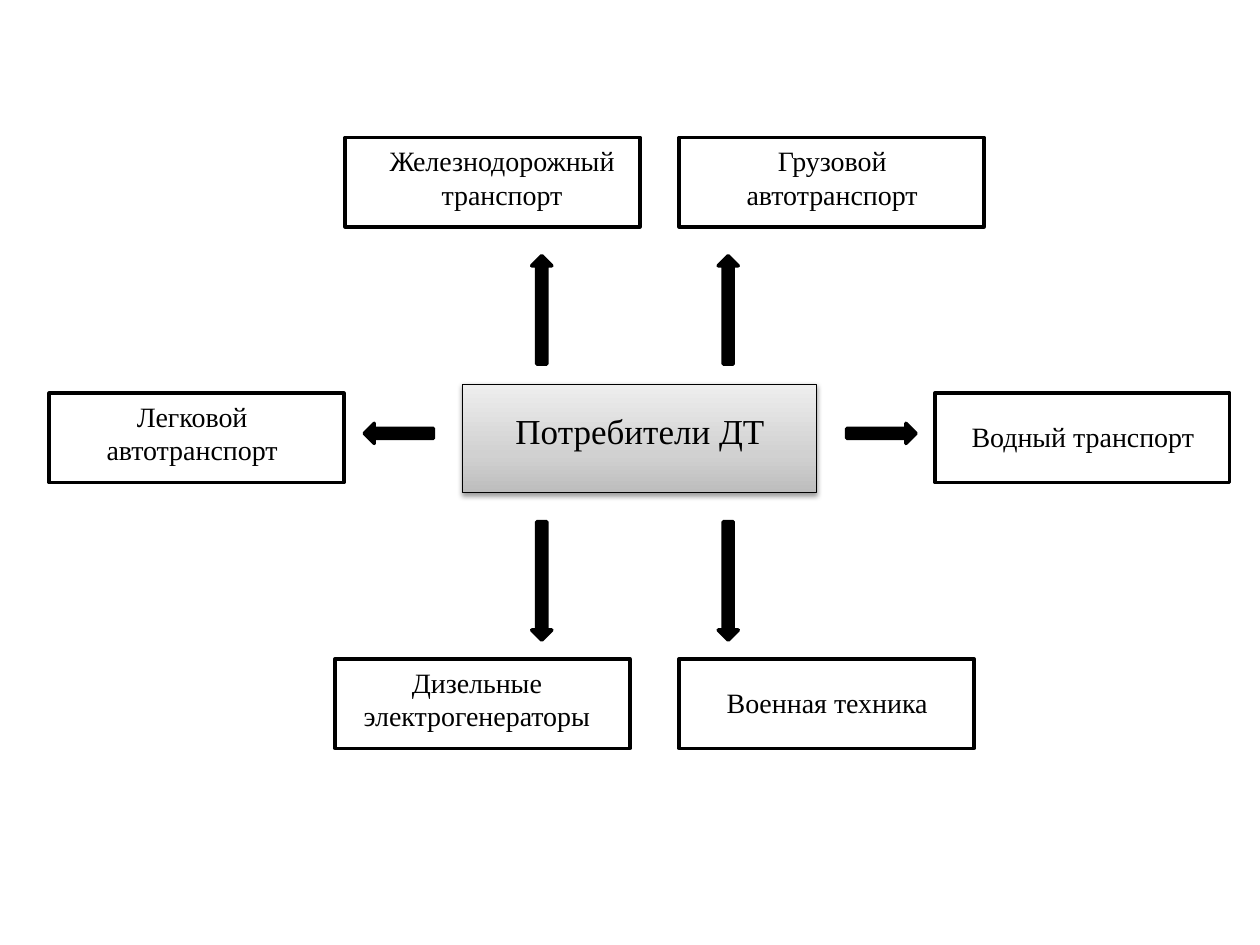
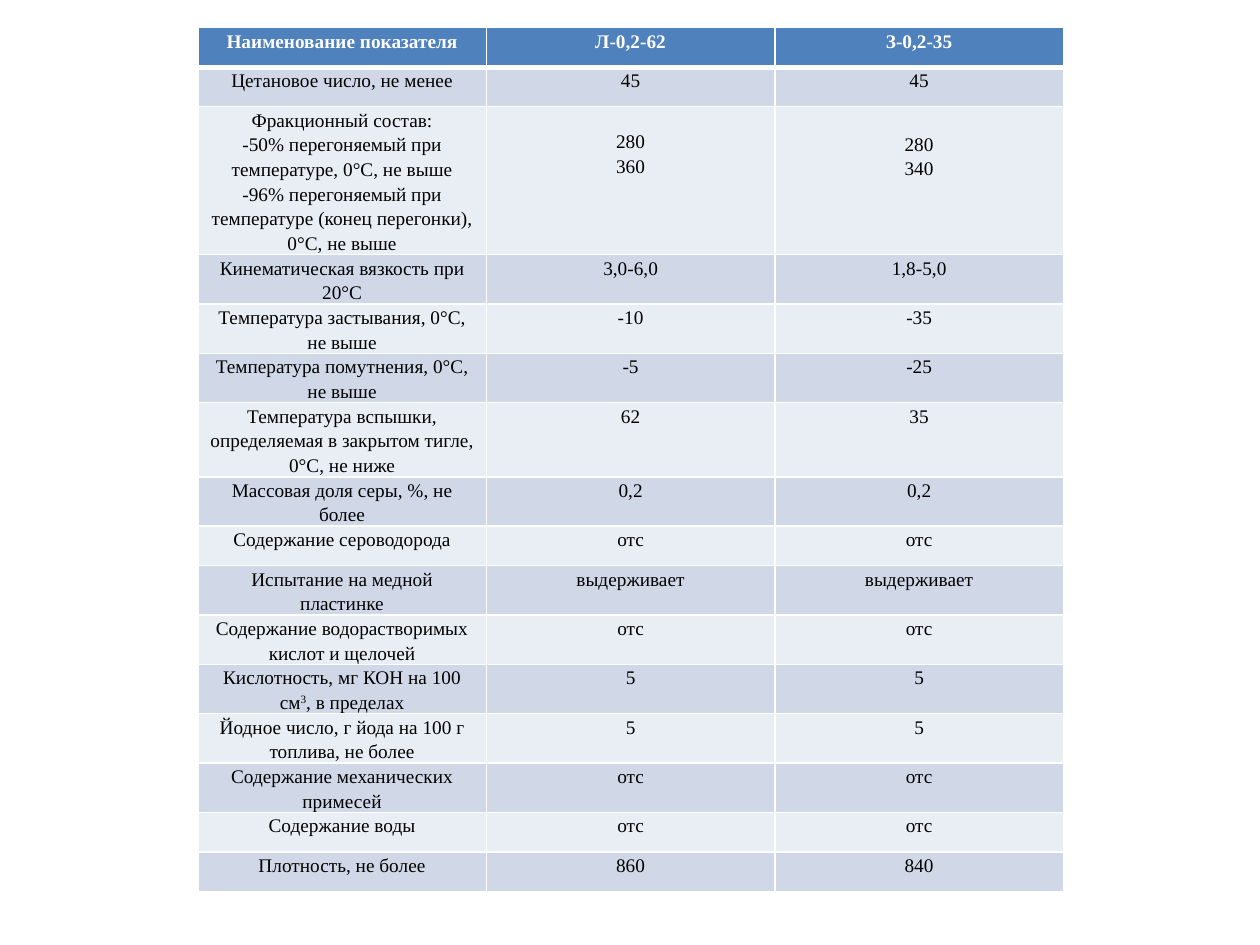
from dataclasses import dataclass

from pptx import Presentation
from pptx.dml.color import RGBColor
from pptx.enum.shapes import MSO_SHAPE
from pptx.enum.text import MSO_AUTO_SIZE, PP_ALIGN
from pptx.oxml import parse_xml
from pptx.oxml.ns import nsdecls, qn
from pptx.util import Inches, Pt


@dataclass(frozen=True)
class Theme:
    font: str = "Times New Roman"
    black: str = "000000"
    white: str = "FFFFFF"
    header: str = "4F81BD"
    bands: tuple = ("D0D8E8", "E9EDF4")
    gradient: tuple = ((0, "BDBDBD"), (35, "D1D1D1"), (100, "EEEEEE"))
    center_size: int = 20
    label_size: int = 16
    table_size: int = 11
    table_line: float = 14.1


CONSUMERS = [
    ("Железнодорожный транспорт", (2.74, 1.09, 2.34), (2.97, 1.09, 2.03, 0.64)),
    ("Грузовой автотранспорт", (5.39, 1.09, 2.42), (5.55, 1.09, 2.11, 0.64)),
    ("Дизельные электрогенераторы", (2.66, 5.23, 2.34), (2.73, 5.23, 2.11, 0.64)),
    ("Военная техника", (5.39, 5.23, 2.34), (5.47, 5.39, 2.19, 0.37)),
    ("Легковой автотранспорт", (0.39, 3.12, 2.34), (0.55, 3.12, 1.95, 0.64)),
    ("Водный транспорт", (7.42, 3.12, 2.34), (7.58, 3.28, 2.03, 0.37)),
]
BOX_HEIGHT = 0.71
ARROW_WIDTH = 0.16

FUEL_ROWS = [
    ("Наименование показателя", "Л-0,2-62", "З-0,2-35"),
    ("Цетановое число, не менее", "45", "45"),
    ("Фракционный состав:\n-50% перегоняемый при температуре, 0°С, не выше\n"
     "-96% перегоняемый при температуре (конец перегонки), 0°С, не выше",
     "280\n360", "280\n340"),
    ("Кинематическая вязкость при 20°С", "3,0-6,0", "1,8-5,0"),
    ("Температура застывания, 0°С, не выше", "-10", "-35"),
    ("Температура помутнения, 0°С, не выше", "-5", "-25"),
    ("Температура вспышки, определяемая в закрытом тигле, 0°С, не ниже", "62", "35"),
    ("Массовая доля серы, %, не более", "0,2", "0,2"),
    ("Содержание сероводорода", "отс", "отс"),
    ("Испытание на медной пластинке", "выдерживает", "выдерживает"),
    ("Содержание водорастворимых кислот и щелочей", "отс", "отс"),
    ("Кислотность, мг КОН на 100 см^3^, в пределах", "5", "5"),
    ("Йодное число, г йода на 100 г топлива, не более", "5", "5"),
    ("Содержание механических примесей", "отс", "отс"),
    ("Содержание воды", "отс", "отс"),
    ("Плотность, не более", "860", "840"),
]
FRACTION_ROW = 2
FRACTION_OFFSETS = {1: 0.17, 2: 0.19}


class Deck:
    def __init__(self, theme):
        self.theme = theme
        self.prs = Presentation()
        self.prs.slide_width = Inches(10)
        self.prs.slide_height = Inches(7.5)
        self.s = None

    def new_slide(self):
        self.s = self.prs.slides.add_slide(self.prs.slide_layouts[6])

    def shape(self, kind, at, fill, line_width=2):
        sp = self.s.shapes.add_shape(kind, *map(Inches, at))
        sp.shadow.inherit = False
        sp.fill.solid()
        sp.fill.fore_color.rgb = RGBColor.from_string(fill)
        sp.line.color.rgb = RGBColor.from_string(self.theme.black)
        sp.line.width = Pt(line_width)
        return sp

    def raised_box(self, at):
        sp = self.shape(MSO_SHAPE.RECTANGLE, at, self.theme.white, 0.75)
        sp.fill.gradient()
        sp.fill.gradient_angle = 90
        spPr = sp._element.spPr
        stops = spPr.find(qn("a:gradFill")).find(qn("a:gsLst"))
        stops.clear()
        for pos, color in self.theme.gradient:
            stops.append(parse_xml(
                f'<a:gs {nsdecls("a")} pos="{pos * 1000}"><a:srgbClr val="{color}"/></a:gs>'))
        spPr.find(qn("a:effectLst")).append(parse_xml(
            f'<a:outerShdw {nsdecls("a")} blurRad="{Pt(3.1)}" dist="{Pt(1.6)}" dir="5400000" '
            f'rotWithShape="0"><a:srgbClr val="{self.theme.black}">'
            '<a:alpha val="38000"/></a:srgbClr></a:outerShdw>'))

    def format_run(self, r, size, color, bold=False):
        r.font.name = self.theme.font
        r.font.size = Pt(size)
        r.font.bold = bold
        r.font.color.rgb = RGBColor.from_string(color)

    def label(self, text, at, size):
        tf = self.s.shapes.add_textbox(*map(Inches, at)).text_frame
        tf.word_wrap = True
        tf.auto_size = MSO_AUTO_SIZE.SHAPE_TO_FIT_TEXT
        tf.text = text
        p = tf.paragraphs[0]
        p.alignment = PP_ALIGN.CENTER
        self.format_run(p.runs[0], size, self.theme.black)

    def cell_borders(self, cell, top, bottom):
        tcPr = cell._tc.get_or_add_tcPr()
        for i, (side, width) in enumerate((("L", 1), ("R", 1), ("T", top), ("B", bottom))):
            tcPr.insert(i, parse_xml(
                f'<a:ln{side} {nsdecls("a")} w="{Pt(width)}"><a:solidFill>'
                f'<a:srgbClr val="{self.theme.white}"/></a:solidFill></a:ln{side}>'))

    def cell(self, cell, text, fill, color, bold):
        cell.fill.solid()
        cell.fill.fore_color.rgb = RGBColor.from_string(fill)
        cell.margin_left = cell.margin_right = Inches(0.08)
        cell.margin_top = cell.margin_bottom = 0
        tf = cell.text_frame
        for i, line in enumerate(text.split("\n")):
            p = tf.add_paragraph() if i else tf.paragraphs[0]
            p.alignment = PP_ALIGN.CENTER
            p.line_spacing = Pt(self.theme.table_line)
            for j, part in enumerate(line.split("^")):
                r = p.add_run()
                r.text = part
                self.format_run(r, self.theme.table_size, color, bold)
                if j % 2:
                    r.font._element.set("baseline", "30000")

    def table(self, rows, left, top, width, height):
        t = self.theme
        n_rows, n_cols = len(rows), len(rows[0])
        table = self.s.shapes.add_table(
            n_rows, n_cols, *map(Inches, (left, top, width, height))).table
        for i, values in enumerate(rows):
            is_header = i == 0
            fill = t.header if is_header else t.bands[(i - 1) % 2]
            color = t.white if is_header else t.black
            for j, text in enumerate(values):
                cell = table.cell(i, j)
                self.cell(cell, text, fill, color, is_header)
                self.cell_borders(cell, 3 if i == 1 else 1, 3 if is_header else 1)
        return table


def consumers_slide(deck):
    deck.new_slide()
    deck.raised_box((3.67, 3.05, 2.81, 0.86))
    deck.label("Потребители ДТ", (3.83, 3.2, 2.5, 0.44), deck.theme.center_size)
    black = deck.theme.black
    for x in (4.22, 5.7):
        deck.shape(MSO_SHAPE.UP_ARROW, (x, 2.03, ARROW_WIDTH, 0.86), black)
        deck.shape(MSO_SHAPE.DOWN_ARROW, (x, 4.14, ARROW_WIDTH, 0.94), black)
    for kind, x in ((MSO_SHAPE.LEFT_ARROW, 2.89), (MSO_SHAPE.RIGHT_ARROW, 6.72)):
        deck.shape(kind, (x, 3.36, 0.55, ARROW_WIDTH), black)
    for text, box, label in CONSUMERS:
        deck.shape(MSO_SHAPE.RECTANGLE, (*box, BOX_HEIGHT), deck.theme.white)
        deck.label(text, label, deck.theme.label_size)


def fuel_slide(deck):
    deck.new_slide()
    table = deck.table(FUEL_ROWS, 1.57, 0.22, 6.87, 5.02)
    for col, offset in FRACTION_OFFSETS.items():
        table.cell(FRACTION_ROW, col).margin_top = Inches(offset)


def main():
    deck = Deck(Theme())
    consumers_slide(deck)
    fuel_slide(deck)
    deck.prs.save("out.pptx")


if __name__ == "__main__":
    main()
